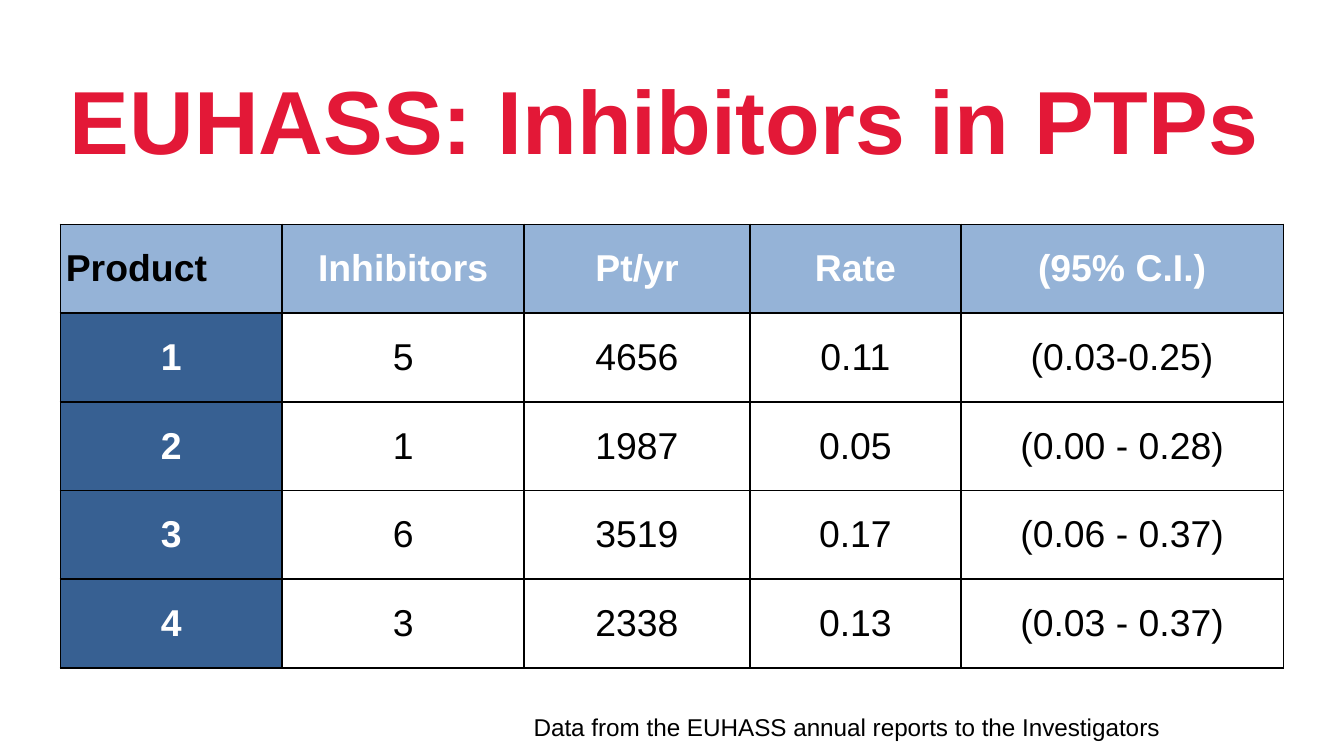
from dataclasses import dataclass

import lxml.etree
import pptx
import pptx.dml.color
import pptx.enum.text
import pptx.oxml.ns
import pptx.util

ALIGN = pptx.enum.text.PP_ALIGN
MIDDLE = pptx.enum.text.MSO_ANCHOR.MIDDLE
WIDTH = pptx.util.Inches(10)
HEIGHT = pptx.util.Emu(WIDTH * 9 // 16)


@dataclass(frozen=True)
class Theme:
    font: str = "Arial"
    title_size: int = 48
    title_spacing: float = 0.83
    table_size: int = 20
    source_size: int = 13
    red: str = "E31837"
    black: str = "000000"
    white: str = "FFFFFF"
    header_blue: str = "95B3D7"
    product_blue: str = "376092"
    border_width: float = 1


THEME = Theme()
COLUMN_SHARES = (0.165, 0.18, 0.168, 0.157, 0.24)
ROW_SHARE = 0.66 / 5.625
ROWS = (
    ("Product", "Inhibitors", "Pt/yr", "Rate", "(95% C.I.)"),
    ("1", "5", "4656", "0.11", "(0.03-0.25)"),
    ("2", "1", "1987", "0.05", "(0.00 - 0.28)"),
    ("3", "6", "3519", "0.17", "(0.06 - 0.37)"),
    ("4", "3", "2338", "0.13", "(0.03 - 0.37)"),
)


def place(left, top, width, height):
    """Turn shares of the slide into lengths."""
    return int(left * WIDTH), int(top * HEIGHT), int(width * WIDTH), int(height * HEIGHT)


def add_run(paragraph, text, size, color, bold=False):
    run = paragraph.add_run()
    run.text = text
    run.font.name = THEME.font
    run.font.size = pptx.util.Pt(size)
    run.font.bold = bold
    run.font.color.rgb = pptx.dml.color.RGBColor.from_string(color)


def add_label(slide, box, text, size, color, bold=False, wrap=True, spacing=1.0):
    frame = slide.shapes.add_textbox(*place(*box)).text_frame
    frame.word_wrap = wrap
    frame.vertical_anchor = MIDDLE
    frame.margin_left = frame.margin_right = frame.margin_top = frame.margin_bottom = 0
    paragraph = frame.paragraphs[0]
    paragraph.alignment = ALIGN.LEFT
    paragraph.line_spacing = spacing
    add_run(paragraph, text, size, color, bold)


def add_borders(cell):
    properties = cell._tc.get_or_add_tcPr()
    qn = pptx.oxml.ns.qn
    for index, side in enumerate(("lnL", "lnR", "lnT", "lnB")):
        line = lxml.etree.Element(qn(f"a:{side}"), w=str(pptx.util.Pt(THEME.border_width)))
        fill = lxml.etree.SubElement(line, qn("a:solidFill"))
        lxml.etree.SubElement(fill, qn("a:srgbClr"), val=THEME.black)
        properties.insert(index, line)


def cell_style(row, column):
    """Return fill, text colour and boldness for a place in the table."""
    if row == 0:
        return THEME.header_blue, THEME.white if column else THEME.black, True
    if column == 0:
        return THEME.product_blue, THEME.white, True
    return None, THEME.black, False


def fill_cell(cell, text, row, column):
    background, color, bold = cell_style(row, column)
    if background:
        cell.fill.solid()
        cell.fill.fore_color.rgb = pptx.dml.color.RGBColor.from_string(background)
    else:
        cell.fill.background()
    cell.vertical_anchor = MIDDLE
    cell.margin_left = cell.margin_right = pptx.util.Inches(0.04)
    cell.margin_top = cell.margin_bottom = pptx.util.Inches(0.03)
    paragraph = cell.text_frame.paragraphs[0]
    paragraph.alignment = ALIGN.CENTER if row or column else ALIGN.LEFT
    add_run(paragraph, text, THEME.table_size, color, bold)
    add_borders(cell)


def add_inhibitor_table(slide, left, top):
    box = place(left, top, sum(COLUMN_SHARES), ROW_SHARE * len(ROWS))
    table = slide.shapes.add_table(len(ROWS), len(COLUMN_SHARES), *box).table
    table.horz_banding = False
    for column, share in zip(table.columns, COLUMN_SHARES):
        column.width = int(share * WIDTH)
    for row, values in enumerate(ROWS):
        table.rows[row].height = int(ROW_SHARE * HEIGHT)
        for column, text in enumerate(values):
            fill_cell(table.cell(row, column), text, row, column)


def main():
    presentation = pptx.Presentation()
    presentation.slide_width, presentation.slide_height = WIDTH, HEIGHT
    slide = presentation.slides.add_slide(presentation.slide_layouts[6])
    add_label(slide, (0.052, 0.084, 0.898, 0.169), "EUHASS: Inhibitors in PTPs",
              THEME.title_size, THEME.red, bold=True, spacing=THEME.title_spacing)
    add_inhibitor_table(slide, 0.045, 0.297)
    add_label(slide, (0.397, 0.942, 0.471, 0.039),
              "Data from the EUHASS annual reports to the Investigators",
              THEME.source_size, THEME.black, wrap=False)
    presentation.save("out.pptx")


if __name__ == "__main__":
    main()
